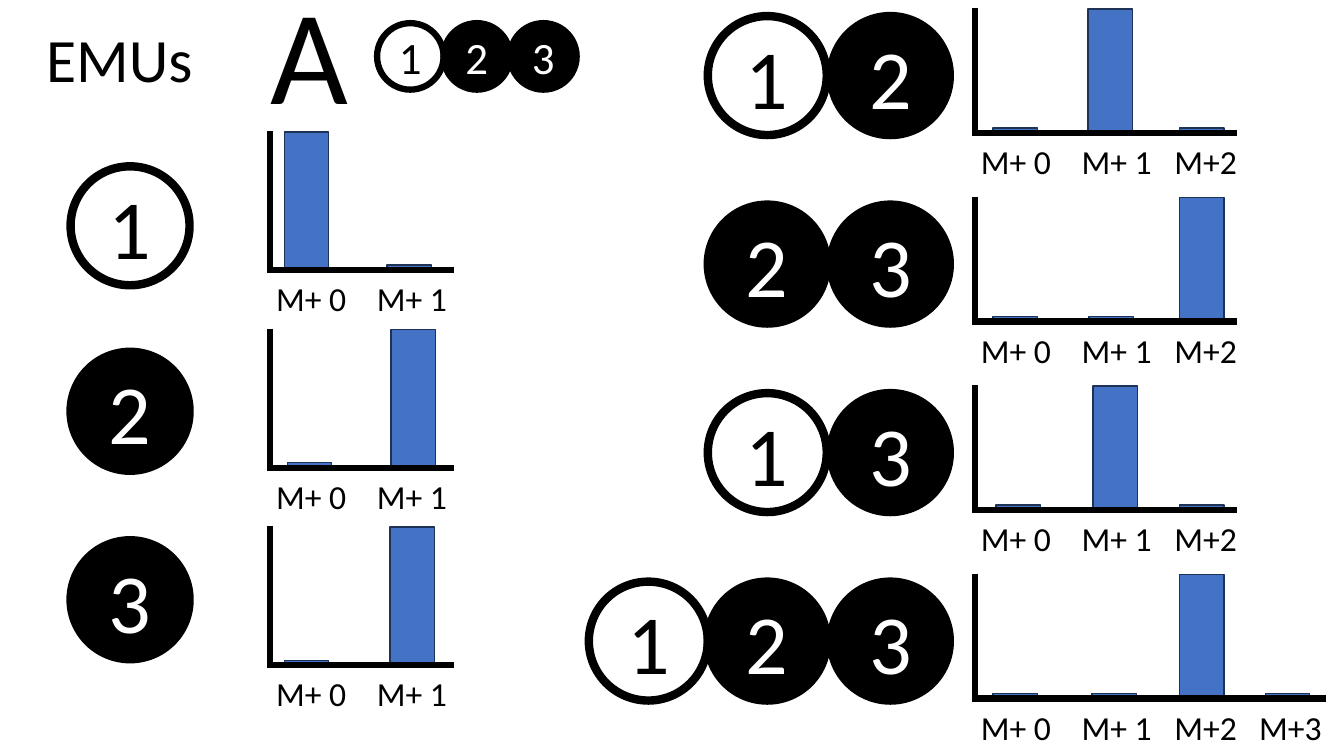
from lxml import etree
from pptx import Presentation
from pptx import util as u
from pptx.dml.color import RGBColor
from pptx.enum import shapes, text
from pptx.oxml.ns import qn

BLACK, WHITE, BLUE, NAVY = "000000", "FFFFFF", "4472C4", "1E3256"
FONT = "Calibri"
LABELS = ["M+ 0", "M+ 1", "M+2", "M+3"]
LABEL_TABS = [1.0, 1.92, 2.76]
BAR_W = 0.44
DISC = 1.18
SMALL_DISC = 0.66


def color(value):
    return RGBColor.from_string(value)


def style_runs(p, size, font_color):
    for r in p.runs:
        r.font.size = u.Pt(size)
        r.font.name = FONT
        r.font.color.rgb = color(font_color)


def add_filled(s, kind, box, fill, line, width):
    sp = s.shapes.add_shape(kind, *map(u.Inches, box))
    sp.shadow.inherit = False
    sp.fill.solid()
    sp.fill.fore_color.rgb = color(fill)
    sp.line.color.rgb = color(line)
    sp.line.width = u.Pt(width)
    return sp


def add_label(s, box, content, size, wrap=False):
    tf = s.shapes.add_textbox(*map(u.Inches, box)).text_frame
    tf.word_wrap = wrap
    tf.text = content
    style_runs(tf.paragraphs[0], size, BLACK)
    return tf.paragraphs[0]


def add_tabs(p, stops):
    tab_list = etree.SubElement(p._p.get_or_add_pPr(), qn("a:tabLst"))
    for stop in stops:
        etree.SubElement(tab_list, qn("a:tab"), pos=str(u.Inches(stop)), algn="l")


def add_axis(s, x1, y1, x2, y2):
    cx = s.shapes.add_connector(shapes.MSO_CONNECTOR.STRAIGHT,
                                *map(u.Inches, (x1, y1, x2, y2)))
    cx.line.color.rgb = color(BLACK)
    cx.line.width = u.Pt(4.5)
    etree.SubElement(cx._element.spPr, qn("a:effectLst"))


def add_disc(s, x, y, digit, diameter=DISC, line=6, size=60):
    # Disc 1 is white, the others are black
    fill, ink = (WHITE, BLACK) if digit == "1" else (BLACK, WHITE)
    sp = add_filled(s, shapes.MSO_SHAPE.OVAL, (x, y, diameter, diameter),
                    fill, BLACK, line)
    tf = sp.text_frame
    tf.text = digit
    tf.vertical_anchor = text.MSO_ANCHOR.MIDDLE
    p = tf.paragraphs[0]
    p.alignment = text.PP_ALIGN.CENTER
    style_runs(p, size, ink)


def add_bar_plot(s, left, top, height, width, label_w, bars, tall):
    """Axes, labels and bars; bars holds left edges, tall the index of the tall bar."""
    base = top + height - 0.03
    add_axis(s, left, top, left, top + height)
    p = add_label(s, (left - 0.04, top + height, label_w, 0.5),
                  "\t".join(LABELS[:len(bars)]), 24, wrap=True)
    add_tabs(p, LABEL_TABS[:len(bars) - 1])
    for i, x in enumerate(bars):
        bar_top, bar_h = (0.01, height - 0.05) if i == tall else (height - 0.08, 0.04)
        add_filled(s, shapes.MSO_SHAPE.RECTANGLE,
                   (x, top + bar_top, BAR_W, bar_h), BLUE, NAVY, 1)
    add_axis(s, left + width, base, left, base)


def main():
    prs = Presentation()
    prs.slide_width, prs.slide_height = u.Inches(13.33), u.Inches(7.5)
    s = prs.slides.add_slide(prs.slide_layouts[6])

    # Heading, letter A and small discs
    add_label(s, (0.36, 0.16, 1.66, 0.84), "EMUs", 44)
    add_label(s, (2.58, -0.35, 0.98, 1.72), "A", 96)
    for i, digit in enumerate("123"):
        add_disc(s, 3.74 + i * SMALL_DISC, 0.23, digit, SMALL_DISC, 4.5, 32)

    # Left column: digit, disc top, bar positions, tall bar
    singles = [("1", 1.65, (2.82, 3.84), 0),
               ("2", 3.49, (2.85, 3.88), 1),
               ("3", 5.36, (2.82, 3.87), 1)]
    for row, (digit, disc_top, bars, tall) in enumerate(singles):
        add_disc(s, 0.7, disc_top, digit)
        add_bar_plot(s, 2.68, 1.3 + row * 1.96, 1.41, 1.82, 1.91, bars, tall)

    # Right column: joined discs, bar positions, tall bar
    disc_lefts = (5.84, 7.02, 8.24)
    joined = [("12", (9.85, 10.79, 11.7), 1),
              ("23", (9.85, 10.8, 11.7), 2),
              ("13", (9.88, 10.84, 11.7), 1),
              ("123", (9.85, 10.83, 11.7, 12.55), 2)]
    for row, (digits, bars, tall) in enumerate(joined):
        offset = row * 1.87
        for x, digit in zip(disc_lefts[-len(digits):], digits):
            add_disc(s, x, 0.16 + offset, digit)
        width, label_w = (3.48, 3.61) if len(bars) == 4 else (2.6, 2.76)
        add_bar_plot(s, 9.67, 0.08 + offset, 1.27, width, label_w, bars, tall)

    prs.save("out.pptx")


if __name__ == "__main__":
    main()
